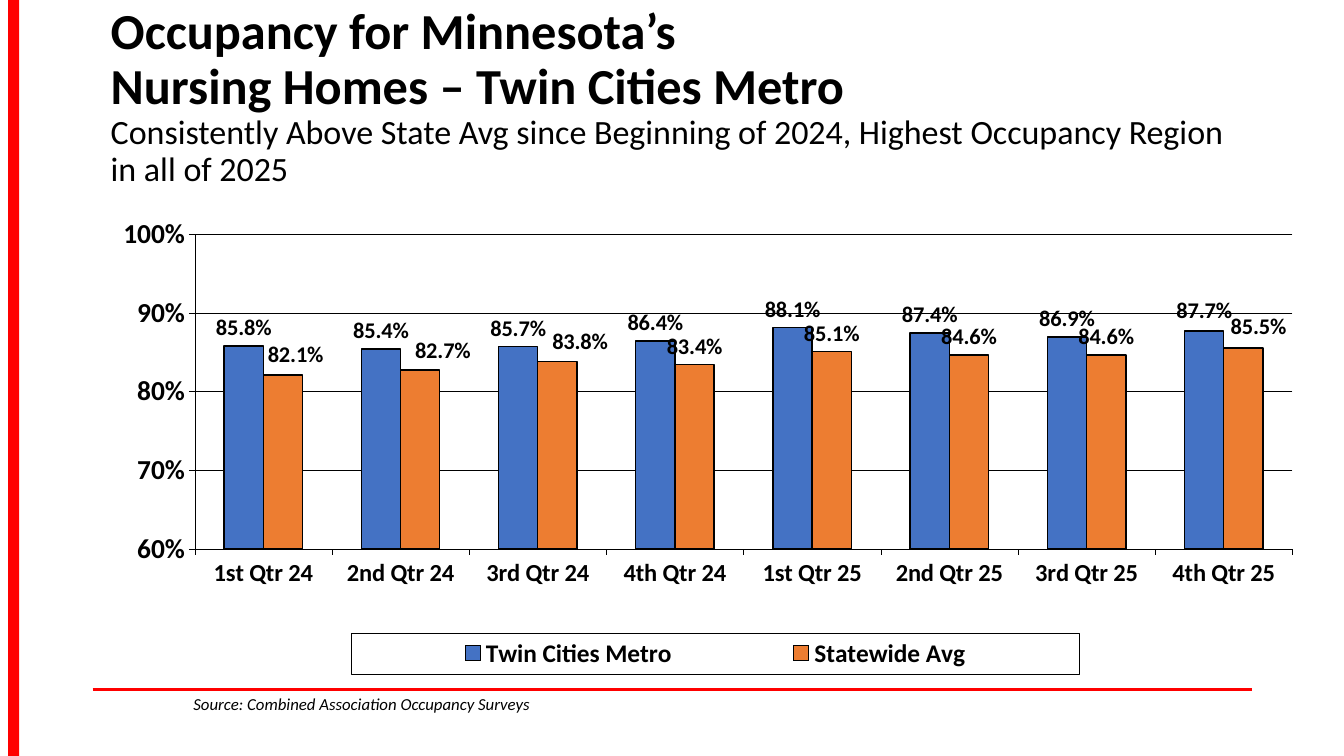
from dataclasses import dataclass, field

from lxml import etree
from pptx import Presentation
from pptx.chart.data import CategoryChartData
from pptx.dml.color import RGBColor
from pptx.enum.chart import XL_CHART_TYPE as ChartType
from pptx.enum.chart import XL_LABEL_POSITION as LabelPos
from pptx.enum.chart import XL_LEGEND_POSITION as LegendPos
from pptx.enum.chart import XL_TICK_MARK as TickMark
from pptx.enum.shapes import MSO_CONNECTOR as Connector
from pptx.enum.shapes import MSO_SHAPE as Shape
from pptx.enum.text import MSO_ANCHOR as Anchor
from pptx.oxml import parse_xml
from pptx.oxml.ns import nsdecls, qn
from pptx.util import Pt

PX = 9144  # 100 px to the inch
BLACK = RGBColor(0x00, 0x00, 0x00)
RED = RGBColor(0xFF, 0x00, 0x00)
BLUE = RGBColor(0x44, 0x72, 0xC4)
ORANGE = RGBColor(0xED, 0x7D, 0x31)
FONT = "Calibri"
HAIRLINE = 0.27
LABEL_FORMAT = "0.0%"


@dataclass(frozen=True)
class Box:
    left: int
    top: int
    width: int
    height: int

    def emu(self) -> tuple[int, ...]:
        return tuple(v * PX for v in (self.left, self.top, self.width, self.height))


@dataclass(frozen=True)
class Region:
    name: str
    color: RGBColor
    rates: tuple[float, ...]
    label_shifts: dict[int, tuple[float, float]] = field(default_factory=dict)


QUARTERS = [f"{q} Qtr {year}" for year in (24, 25) for q in ("1st", "2nd", "3rd", "4th")]
REGIONS = (
    Region("Twin Cities Metro", BLUE,
           (0.858, 0.854, 0.857, 0.864, 0.881, 0.874, 0.869, 0.877),
           {7: (0, -0.004)}),
    Region("Statewide Avg", ORANGE,
           (0.821, 0.827, 0.838, 0.834, 0.851, 0.846, 0.846, 0.855),
           {0: (0.01, -0.004), 1: (0.018, -0.002), 2: (0.018, -0.004), 7: (0.012, -0.006)}),
)


def set_font(font, size: float, bold: bool = False, italic: bool = False) -> None:
    font.name = FONT
    font.size = Pt(size)
    font.bold = bold
    font.italic = italic
    font.color.rgb = BLACK


def set_line(line, color: RGBColor, width: float) -> None:
    line.color.rgb = color
    line.width = Pt(width)


def set_layout(parent, index: int, **values: float) -> None:
    """Place a chart part by fractions of the chart; x and y alone give an offset."""
    for old in parent.findall(qn("c:layout")):
        parent.remove(old)
    layout = parse_xml(f"<c:layout {nsdecls('c')}><c:manualLayout/></c:layout>")
    manual = layout[0]
    settings = {}
    if parent.tag == qn("c:plotArea"):
        settings["layoutTarget"] = "inner"
    if "w" in values:
        settings |= {"xMode": "edge", "yMode": "edge"}
    for tag, value in (settings | values).items():
        etree.SubElement(manual, qn(f"c:{tag}")).set("val", str(value))
    parent.insert(index, layout)


def add_text_box(slide, box: Box):
    tf = slide.shapes.add_textbox(*box.emu()).text_frame
    tf.word_wrap = True
    return tf


def add_frame(slide) -> None:
    bar = slide.shapes.add_shape(Shape.RECTANGLE, *Box(8, 0, 11, 750).emu())
    bar.shadow.inherit = False
    bar.fill.solid()
    bar.fill.fore_color.rgb = RED
    bar.line.fill.background()
    ends = [v * PX for v in (92, 684, 1242, 684)]
    rule = slide.shapes.add_connector(Connector.STRAIGHT, *ends)
    set_line(rule.line, RED, 2)
    etree.SubElement(rule._element.spPr, qn("a:effectLst"))


def add_title(slide) -> None:
    tf = add_text_box(slide, Box(100, 24, 1150, 145))
    tf.vertical_anchor = Anchor.MIDDLE
    p = tf.paragraphs[0]
    p.line_spacing = 0.9
    for line in ("Occupancy for Minnesota’s", "Nursing Homes – Twin Cities Metro"):
        r = p.add_run()
        r.text = line
        set_font(r.font, 36, bold=True)
        p.add_line_break()
    r = p.add_run()
    r.text = ("Consistently Above State Avg since Beginning of 2024, "
              "Highest Occupancy Region in all of 2025")
    set_font(r.font, 24.3)


def style_axes(chart) -> None:
    for axis, size in ((chart.category_axis, 17.5), (chart.value_axis, 19.6)):
        set_font(axis.tick_labels.font, size, bold=True)
        set_line(axis.format.line, BLACK, HAIRLINE)
        axis.major_tick_mark = TickMark.OUTSIDE
        axis.minor_tick_mark = TickMark.NONE
    axis = chart.value_axis
    axis.minimum_scale, axis.maximum_scale, axis.major_unit = 0.6, 1, 0.1
    axis.tick_labels.number_format = "0%"
    axis.tick_labels.number_format_is_linked = False
    axis.has_major_gridlines = True
    set_line(axis.major_gridlines.format.line, BLACK, HAIRLINE)


def style_series(series, region: Region) -> None:
    series.format.fill.solid()
    series.format.fill.fore_color.rgb = region.color
    set_line(series.format.line, BLACK, 1.09)
    labels = series.data_labels
    labels.show_value = True
    labels.number_format = LABEL_FORMAT
    labels.number_format_is_linked = False
    labels.position = LabelPos.OUTSIDE_END
    set_font(labels.font, 16, bold=True)
    for index, (x, y) in region.label_shifts.items():
        label = series.points[index].data_label
        set_font(label.font, 16, bold=True)
        label.position = LabelPos.OUTSIDE_END
        node = labels._element.xpath(f'c:dLbl[c:idx/@val="{index}"]')[0]
        node.insert(1, parse_xml(
            f'<c:numFmt {nsdecls("c")} formatCode="{LABEL_FORMAT}" sourceLinked="0"/>'))
        set_layout(node, 1, x=x, y=y)


def add_legend(chart) -> None:
    chart.has_legend = True
    legend = chart.legend
    legend.position = LegendPos.BOTTOM
    legend.include_in_layout = False
    set_font(legend.font, 18.1, bold=True)
    node = legend._element
    set_layout(node, 1, x=0.255, y=0.909, w=0.576, h=0.084)
    node.find(qn("c:txPr")).addprevious(parse_xml(
        f'<c:spPr {nsdecls("c", "a")}><a:ln w="{Pt(HAIRLINE)}"><a:solidFill>'
        f'<a:srgbClr val="{BLACK}"/></a:solidFill></a:ln></c:spPr>'))


def add_occupancy_chart(slide) -> None:
    data = CategoryChartData(number_format=LABEL_FORMAT)
    data.categories = QUARTERS
    for region in REGIONS:
        data.add_series(region.name, region.rates)
    chart = slide.shapes.add_chart(
        ChartType.COLUMN_CLUSTERED, *Box(29, 186, 1253, 486).emu(), data).chart
    chart.has_title = False
    set_font(chart.font, 19.6, bold=True)
    chart.font.name = "Times New Roman"
    plot = chart.plots[0]
    plot.gap_width = 150
    plot.overlap = 0
    plot.vary_by_categories = False
    style_axes(chart)
    for series, region in zip(plot.series, REGIONS):
        style_series(series, region)
    add_legend(chart)
    plot_area = chart._chartSpace.chart.plotArea
    set_layout(plot_area, 0, x=0.131, y=0.095, w=0.869, h=0.643)


def add_source_line(slide) -> None:
    p = add_text_box(slide, Box(182, 683, 527, 50)).paragraphs[0]
    p.text = "Source: Combined Association Occupancy Surveys"
    set_font(p.font, 12, italic=True)


def main() -> None:
    prs = Presentation()
    prs.slide_width, prs.slide_height = 1333 * PX, 750 * PX
    slide = prs.slides.add_slide(prs.slide_layouts[6])
    add_frame(slide)
    add_title(slide)
    add_occupancy_chart(slide)
    add_source_line(slide)
    prs.save("out.pptx")


if __name__ == "__main__":
    main()
